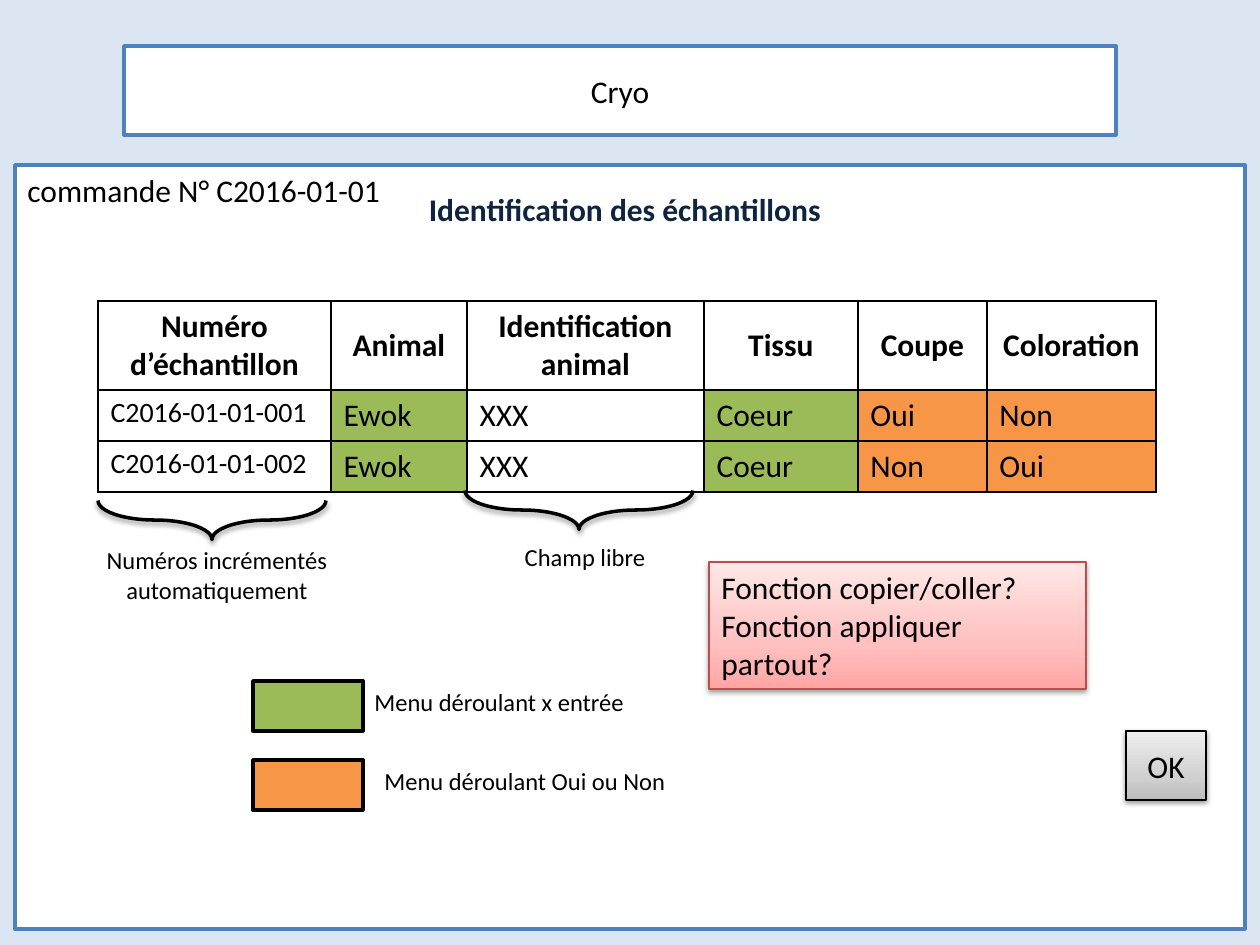
from copy import deepcopy

from pptx import Presentation
from pptx.dml.color import RGBColor
from pptx.enum.shapes import MSO_SHAPE
from pptx.enum.text import MSO_ANCHOR, PP_ALIGN
from pptx.oxml import parse_xml
from pptx.oxml.ns import nsdecls, qn
from pptx.util import Emu, Pt

EMU_PER_PX = 914400 / 126
FONT = "Calibri"
COLORS = {
    "background": "DCE6F2", "white": "FFFFFF", "black": "000000",
    "blue": "4F81BD", "navy": "0F243E", "green": "9BBB59",
    "orange": "F79646", "red": "BF4C48",
}
GRAY_STOPS = [(0, "BDBDBD"), (0.35, "D1D1D1"), (1, "EEEEEE")]
PINK_STOPS = [(0, "FFA6A5"), (0.35, "FFC0BF"), (1, "FFE7E7")]
HEADERS = ["Numéro d’échantillon", "Animal", "Identification animal",
           "Tissu", "Coupe", "Coloration"]
SAMPLES = [["C2016-01-01-001", "Ewok", "XXX", "Coeur", "Oui", "Non"],
           ["C2016-01-01-002", "Ewok", "XXX", "Coeur", "Non", "Oui"]]
COLUMN_WIDTHS = [233, 136, 237, 154, 129, 169]
COLUMN_FILLS = ["white", "green", "white", "green", "orange", "orange"]
ROW_HEIGHTS = [89, 51, 51]


def px(value):
    return Emu(round(value * EMU_PER_PX))


def rgb(name):
    return RGBColor.from_string(COLORS[name])


def write_text(frame, text, size=18, bold=False, color="black",
               align=PP_ALIGN.LEFT, anchor=MSO_ANCHOR.TOP):
    """Fill a text frame, one paragraph per line of text."""
    frame.word_wrap = True
    frame.vertical_anchor = anchor
    frame.text = text
    for para in frame.paragraphs:
        para.alignment = align
        for span in para.runs:
            span.font.name = FONT
            span.font.size = Pt(size)
            span.font.bold = bold
            span.font.color.rgb = rgb(color)


def style_box(shape, fill=None, line="black", width=2):
    if fill:
        shape.fill.solid()
        shape.fill.fore_color.rgb = rgb(fill)
    else:
        shape.fill.background()
    shape.line.color.rgb = rgb(line)
    shape.line.width = Pt(width)


def add_box(page, place, kind=MSO_SHAPE.RECTANGLE, **style):
    box = page.shapes.add_shape(kind, *map(px, place))
    box.shadow.inherit = False
    style_box(box, **style)
    return box


def add_label(page, place, text, **style):
    box = page.shapes.add_textbox(*map(px, place))
    write_text(box.text_frame, text, **style)


def add_shadow(shape):
    effects = shape._element.spPr.find(qn("a:effectLst"))
    effects.append(parse_xml(
        f'<a:outerShdw {nsdecls("a")} blurRad="{Pt(3.1)}" dist="{Pt(1.6)}" '
        f'dir="5400000" rotWithShape="0"><a:srgbClr val="{COLORS["black"]}">'
        '<a:alpha val="38000"/></a:srgbClr></a:outerShdw>'))


def add_gradient_box(page, place, stops, line, text, **style):
    """Add a shadowed box whose gradient runs from bottom to top."""
    box = add_box(page, place, line=line, width=0.75)
    box.fill.gradient()
    box.fill.gradient_angle = 90
    stop_list = box._element.spPr.find(qn("a:gradFill")).find(qn("a:gsLst"))
    while len(stop_list) < len(stops):
        stop_list.append(deepcopy(stop_list[0]))
    for stop, (position, color) in zip(box.fill.gradient_stops, stops):
        stop.position = position
        stop.color.rgb = RGBColor.from_string(color)
    add_shadow(box)
    write_text(box.text_frame, text, **style)


def add_brace(page, center_x, center_y):
    """Add a brace that points down, centred on the given point."""
    width, length = 39, 228
    place = (center_x - width / 2, center_y - length / 2, width, length)
    brace = add_box(page, place, MSO_SHAPE.LEFT_BRACE)
    brace.rotation = 270
    brace.adjustments[0] = 2.213
    add_shadow(brace)


def add_borders(cell):
    properties = cell._tc.get_or_add_tcPr()
    for side in ("lnL", "lnR", "lnT", "lnB"):
        properties.append(parse_xml(
            f'<a:{side} {nsdecls("a")} w="{Pt(1)}"><a:solidFill>'
            f'<a:srgbClr val="{COLORS["black"]}"/></a:solidFill></a:{side}>'))


def add_sample_table(page):
    rows = [HEADERS] + SAMPLES
    table = page.shapes.add_table(
        len(rows), len(HEADERS), px(98), px(301),
        px(sum(COLUMN_WIDTHS)), px(sum(ROW_HEIGHTS))).table
    for column, width in zip(table.columns, COLUMN_WIDTHS):
        column.width = px(width)
    for row, height in zip(table.rows, ROW_HEIGHTS):
        row.height = px(height)
    for r, texts in enumerate(rows):
        for c, text in enumerate(texts):
            cell = table.cell(r, c)
            add_borders(cell)
            cell.fill.solid()
            if r == 0:
                cell.fill.fore_color.rgb = rgb("white")
                cell.vertical_anchor = MSO_ANCHOR.MIDDLE
                write_text(cell.text_frame, text, bold=True,
                           align=PP_ALIGN.CENTER, anchor=MSO_ANCHOR.MIDDLE)
            else:
                cell.fill.fore_color.rgb = rgb(COLUMN_FILLS[c])
                write_text(cell.text_frame, text, size=16 if c == 0 else 18)


def add_title(page, place, text):
    title = page.shapes.title
    title.left, title.top, title.width, title.height = map(px, place)
    style_box(title, fill="white", line="blue")
    write_text(title.text_frame, text, align=PP_ALIGN.CENTER,
               anchor=MSO_ANCHOR.MIDDLE)


def main():
    deck = Presentation()
    deck.slide_width, deck.slide_height = px(1260), px(945)
    page = deck.slides.add_slide(deck.slide_layouts[5])
    page.background.fill.solid()
    page.background.fill.fore_color.rgb = rgb("background")

    add_title(page, (124, 46, 992, 89), "Cryo")
    add_box(page, (15, 165, 1230, 764), fill="white", line="blue")
    add_label(page, (15, 165, 397, 50), "commande N° C2016-01-01")
    add_label(page, (15, 184, 1220, 50), "Identification des échantillons",
              bold=True, color="navy", align=PP_ALIGN.CENTER)
    add_sample_table(page)

    add_brace(page, 212, 520)
    add_label(page, (78, 539, 278, 72), "Numéros incrémentés automatiquement",
              size=14, align=PP_ALIGN.CENTER)
    add_brace(page, 579, 510)
    add_label(page, (466, 536, 238, 43), "Champ libre",
              size=14, align=PP_ALIGN.CENTER)

    legend = [("green", 681, 362, "Menu déroulant x entrée"),
              ("orange", 760, 372, "Menu déroulant Oui ou Non")]
    for fill, top, text_left, text in legend:
        add_box(page, (253, top, 110, 50), fill=fill)
        add_label(page, (text_left, top, 400, 43), text, size=14)

    add_gradient_box(page, (709, 562, 377, 127), PINK_STOPS, "red",
                     "Fonction copier/coller?\nFonction appliquer partout?")
    add_gradient_box(page, (1126, 731, 80, 69), GRAY_STOPS, "black", "OK",
                     align=PP_ALIGN.CENTER, anchor=MSO_ANCHOR.MIDDLE)
    deck.save("out.pptx")


if __name__ == "__main__":
    main()
